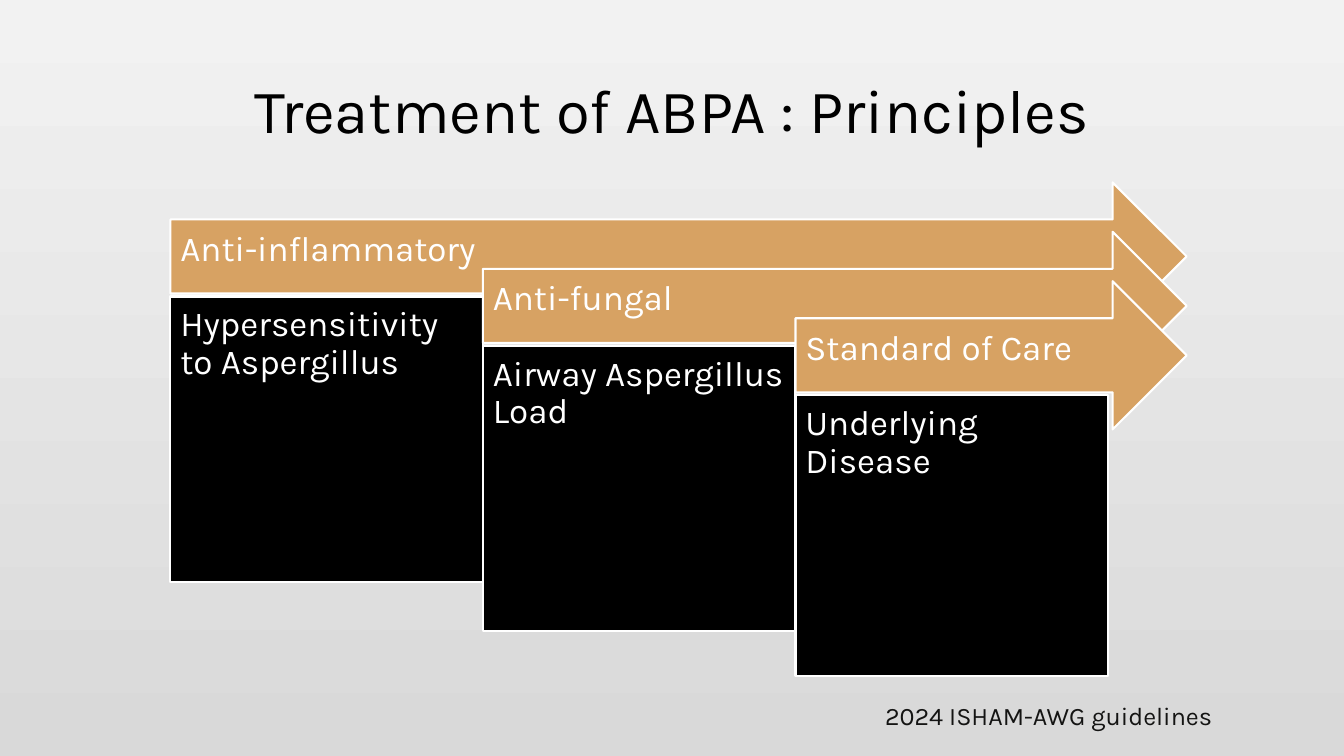
import dataclasses

import pptx
import pptx.dml.color
import pptx.enum.shapes
import pptx.enum.text
import pptx.util

SHAPE = pptx.enum.shapes.MSO_SHAPE
ANCHOR = pptx.enum.text.MSO_ANCHOR
ALIGN = pptx.enum.text.PP_ALIGN
Inches = pptx.util.Inches


@dataclasses.dataclass(frozen=True)
class Theme:
    font: str = "Karla"
    back_top: str = "F2F2F2"
    back_bottom: str = "D9D9D9"
    arrow: str = "D7A263"
    panel: str = "000000"
    light: str = "FFFFFF"
    title: str = "000000"
    source: str = "141413"
    title_size: int = 44
    body_size: int = 25
    source_size: int = 18
    outline: float = 1.5


THEME = Theme()
TREATMENTS = [
    ("Anti-inflammatory", "Hypersensitivity to Aspergillus"),
    ("Anti-fungal", "Airway Aspergillus Load"),
    ("Standard of Care", "Underlying Disease"),
]


def rgb(value):
    return pptx.dml.color.RGBColor.from_string(value)


def write(s, text, size, color, anchor=ANCHOR.TOP, align=ALIGN.LEFT,
          spacing=0.9, insets=(0.1, 0.1, 0.1, 0.1)):
    """Set the text of a shape; insets run left, top, right, bottom."""
    tf = s.text_frame
    tf.text = text
    tf.word_wrap = True
    tf.vertical_anchor = anchor
    (tf.margin_left, tf.margin_top,
     tf.margin_right, tf.margin_bottom) = map(Inches, insets)
    p = tf.paragraphs[0]
    p.alignment = align
    p.line_spacing = spacing
    font = p.runs[0].font
    font.name = THEME.font
    font.size = pptx.util.Pt(size)
    font.color.rgb = rgb(color)


def add_block(slide, kind, box, fill):
    s = slide.shapes.add_shape(kind, *map(Inches, box))
    s.shadow.inherit = False
    s.fill.solid()
    s.fill.fore_color.rgb = rgb(fill)
    s.line.color.rgb = rgb(THEME.light)
    s.line.width = pptx.util.Pt(THEME.outline)
    return s


def paint_background(slide):
    fill = slide.background.fill
    fill.gradient()
    fill.gradient_angle = 270
    for stop, color in zip(fill.gradient_stops, (THEME.back_top, THEME.back_bottom)):
        stop.color.rgb = rgb(color)


def add_label(slide, box, text, size, color, **layout):
    s = slide.shapes.add_textbox(*map(Inches, box))
    write(s, text, size, color, **layout)


def add_cascade(slide, box, treatments):
    """Arrows that share one right edge, each stepping down over its panel."""
    left, top, width, height = box
    arrow_h = 0.3 * height
    column = 0.3075 * width
    step = arrow_h / 3
    panel_drop = 0.77 * arrow_h
    panel_h = 2.83
    for i, (treatment, target) in enumerate(treatments):
        x, y = left + i * column, top + i * step
        arrow = add_block(slide, SHAPE.RIGHT_ARROW,
                          (x, y, left + width - x, arrow_h), THEME.arrow)
        write(arrow, treatment, THEME.body_size, THEME.light,
              anchor=ANCHOR.MIDDLE, insets=(0.1, 0.1, 0.28, 0.23))
        panel_top = y + panel_drop
        panel = add_block(slide, SHAPE.RECTANGLE,
                          (x, panel_top, column,
                           min(panel_h, top + height - panel_top)), THEME.panel)
        write(panel, target, THEME.body_size, THEME.light)


def main():
    prs = pptx.Presentation()
    prs.slide_width, prs.slide_height = Inches(13.33), Inches(7.5)
    slide = prs.slides.add_slide(prs.slide_layouts[6])
    paint_background(slide)
    add_label(slide, (0.92, 0.4, 11.5, 1.45), "Treatment of ABPA : Principles",
              THEME.title_size, THEME.title,
              anchor=ANCHOR.MIDDLE, align=ALIGN.CENTER, insets=(0.1, 0.05, 0.1, 0.05))
    add_cascade(slide, (1.69, 1.81, 10.08, 4.9), TREATMENTS)
    add_label(slide, (8.68, 6.9, 3.73, 0.4), "2024 ISHAM-AWG guidelines",
              THEME.source_size, THEME.source,
              spacing=1.0, insets=(0.1, 0.05, 0.1, 0.05))
    prs.save("out.pptx")


if __name__ == "__main__":
    main()
